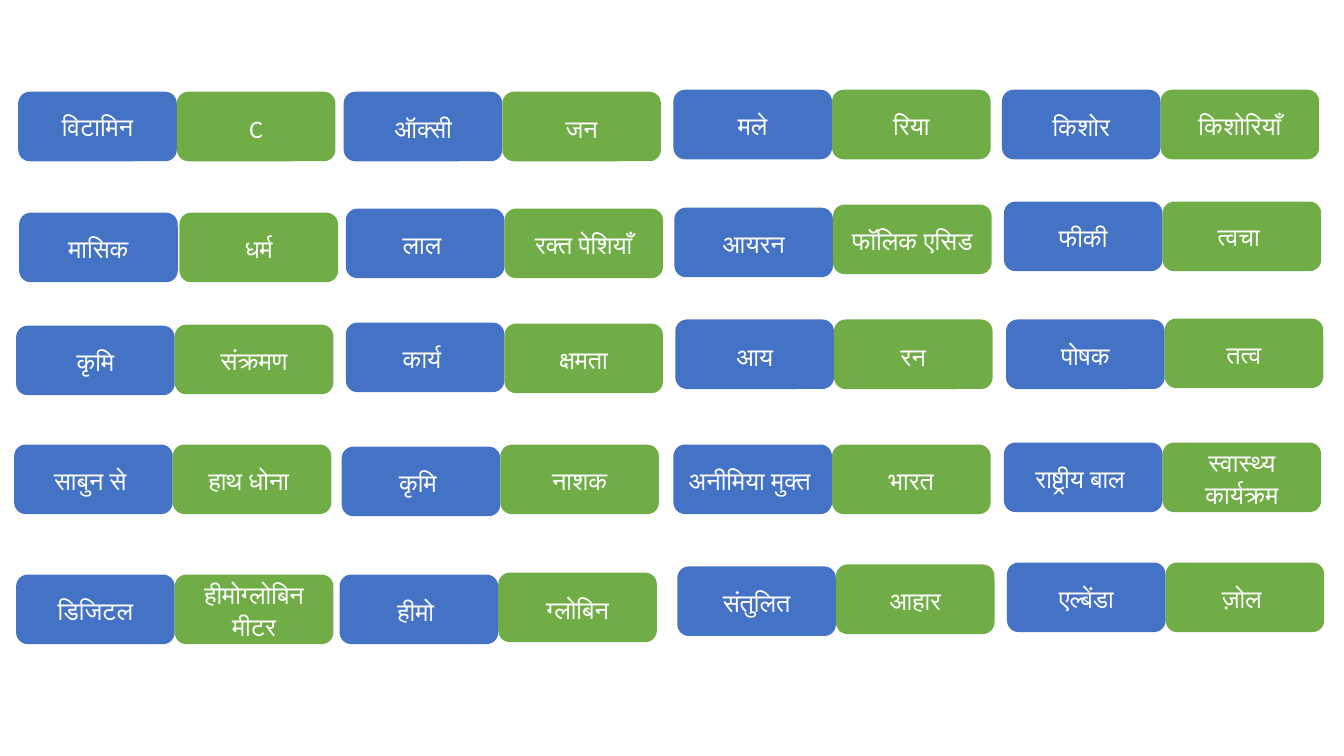
"""Build a slide of Hindi word pairs on blue and green cards."""
from pptx import Presentation
from pptx.dml.color import RGBColor
from pptx.enum.shapes import MSO_SHAPE
from pptx.enum.text import MSO_ANCHOR, PP_ALIGN
from pptx.util import Pt

PAIRS = [
    ("विटामिन", "C", 13, 65.5),
    ("ऑक्सी", "जन", 245.5, 65.5),
    ("मले", "रिया", 481, 64.1),
    ("किशोर", "किशोरियाँ", 715.7, 64.1),
    ("मासिक", "धर्म", 13.7, 151.9),
    ("लाल ", "रक्त पेशियाँ", 247, 149),
    ("आयरन", "फॉलिक एसिड", 481.7, 148.3),
    ("फीकी", "त्वचा ", 717.1, 144),
    ("कृमि", "संक्रमण", 11.5, 232.6),
    ("कार्य ", "क्षमता", 247, 230.4),
    ("आय", "रन", 482.4, 228.2),
    ("पोषक", "तत्व", 718.6, 228.2),
    ("साबुन से ", "हाथ धोना ", 10.1, 317.5),
    ("कृमि ", "नाशक", 244.1, 319),
    ("अनीमिया मुक्त ", "भारत", 481, 317.5),
    ("राष्ट्रीय बाल ", "स्वास्थ्य कार्यक्रम", 717.1, 316.1),
    ("डिजिटल", "हीमोग्लोबिन मीटर", 11.5, 410.4),
    ("हीमो ", "ग्लोबिन", 242.6, 410.4),
    ("संतुलित", "आहार", 483.8, 404.6),
    ("एल्बेंडा", "ज़ोल ", 719.3, 401.8),
]
SHIFT = {
    "धर्म": (1.2, 0), "फॉलिक एसिड": (0, -2.2), "संक्रमण": (0, -0.7),
    "क्षमता": (0, 0.7), "तत्व": (0, -0.7), "नाशक": (0, -1.4),
    "ग्लोबिन": (0, -1.4), "आहार": (0, -1.4),
}
LOOSE = ("ऑक्सी", "जन", "C", "किशोर", "आय", "रन", "हीमो ", "ग्लोबिन")
TIGHT = ("विटामिन", "त्वचा ")
SERIF = ("साबुन से ", "हाथ धोना ")
THEME = {
    "fills": (RGBColor(0x44, 0x72, 0xC4), RGBColor(0x70, 0xAD, 0x47)),
    "ink": RGBColor(0xFF, 0xFF, 0xFF),
    "size": 18,
    "font": "Calibri",
    "serif": "Times New Roman",
}
WIDE, HIGH = 113.3, 49.7


def write(frame, text, *, font, lead, size=THEME["size"], ink=THEME["ink"]):
    """Put centred text in a frame."""
    frame.word_wrap = True
    frame.vertical_anchor = MSO_ANCHOR.MIDDLE
    para = frame.paragraphs[0]
    para.alignment = PP_ALIGN.CENTER
    para.line_spacing = lead
    run = para.add_run()
    run.text = text
    run.font.name = font
    run.font.size = Pt(size)
    run.font.color.rgb = ink


def card(slide, word, left, top, fill):
    """Draw one rounded card with its word."""
    box = slide.shapes.add_shape(
        MSO_SHAPE.ROUNDED_RECTANGLE, Pt(left), Pt(top), Pt(WIDE), Pt(HIGH))
    box.shadow.inherit = False
    box.fill.solid()
    box.fill.fore_color.rgb = fill
    box.line.fill.background()
    lead = 1.15 if word in LOOSE else 1.0 if word in TIGHT else 1.07
    font = THEME["serif"] if word in SERIF else THEME["font"]
    write(box.text_frame, word, font=font, lead=lead)


def main():
    """Lay all blue cards, then the green card beside each."""
    deck = Presentation()
    deck.slide_width, deck.slide_height = Pt(960), Pt(540)
    slide = deck.slides.add_slide(deck.slide_layouts[6])
    for side, fill in enumerate(THEME["fills"]):
        for *words, left, top in PAIRS:
            word = words[side]
            across, down = SHIFT.get(word, (0, 0))
            card(slide, word, left + side * WIDE + across, top + down, fill)
    deck.save("out.pptx")


if __name__ == "__main__":
    main()
